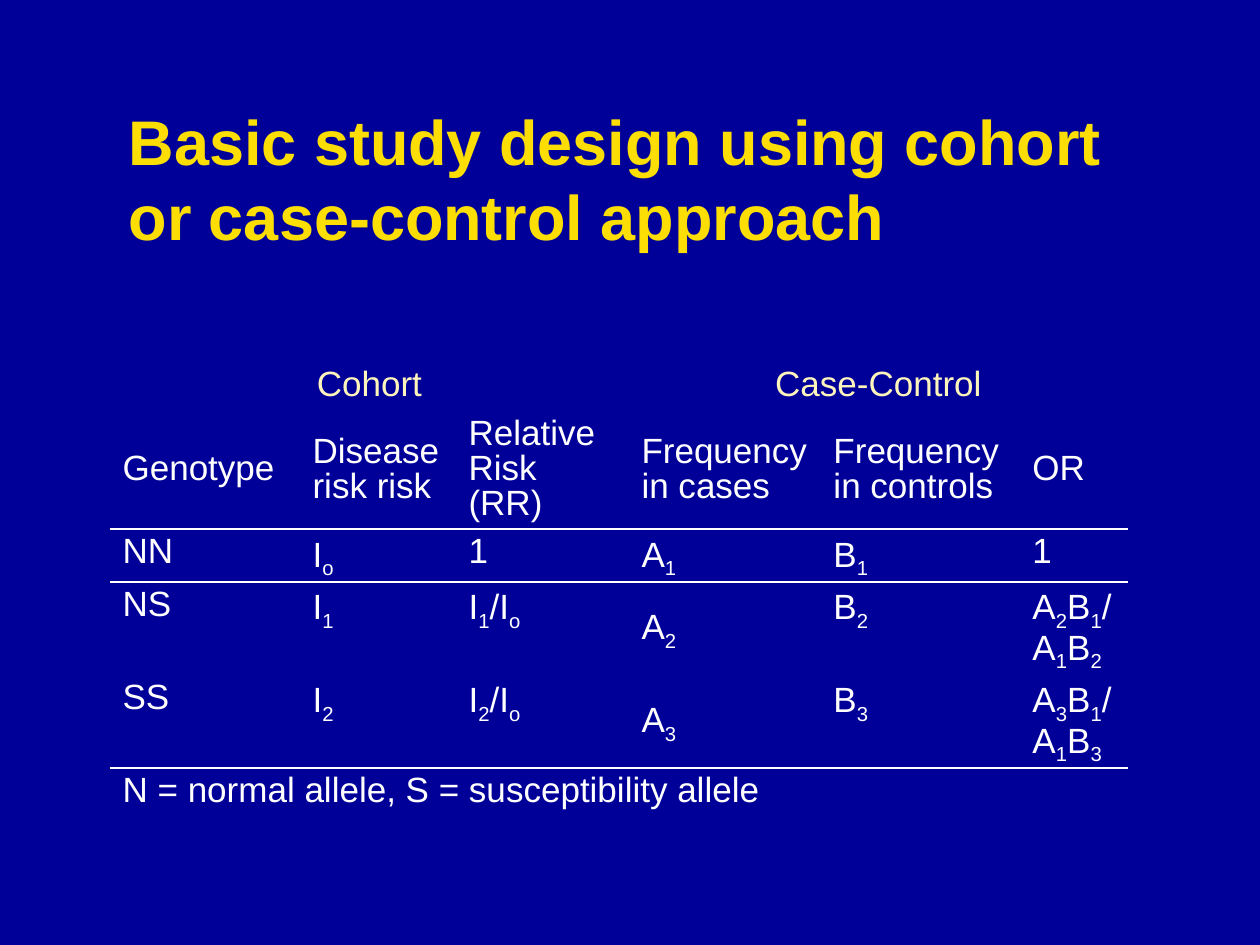
"""Build a slide comparing cohort and case-control designs in one table."""
from lxml.etree import SubElement
from pptx import Presentation
from pptx.dml.color import RGBColor
from pptx.enum.text import MSO_ANCHOR as Anchor, MSO_AUTO_SIZE as AutoSize, PP_ALIGN as Align
from pptx.oxml import parse_xml
from pptx.oxml.ns import nsdecls, qn
from pptx.util import Pt

PX = 914400 // 126
COLORS = {"background": "000099", "title": "FCDE04", "group": "FDF5BB", "text": "FFFFFF"}
NO_GRID_STYLE = "{2D5ABB26-0587-4C30-8999-92F81FD0307C}"

TITLE = "Basic study design using cohort or case-control approach"
GROUPS = [("Cohort", 0, 2), ("Case-Control", 3, 5)]
HEADERS = ["Genotype", "Disease risk risk", "Relative Risk (RR)",
           "Frequency in cases", "Frequency in controls", "OR"]
GENOTYPES = [
    ["NN", "I_o", "1", "A_1", "B_1", "1"],
    ["NS", "I_1", "I_1/I_o", "A_2", "B_2", "A_2B_1/ A_1B_2"],
    ["SS", "I_2", "I_2/I_o", "A_3", "B_3", "A_3B_1/ A_1B_3"],
]
FOOTNOTE = "N = normal allele, S = susceptibility allele"

TITLE_BOX = (116, 96, 1050, 164)
TABLE_LEFT, TABLE_TOP, ROW_HEIGHT = 110, 360, 51
COLUMN_WIDTHS = [190, 156, 173, 192, 199, 108]
CASES_COLUMN = HEADERS.index("Frequency in cases")


def write(frame, text, size=20, color="text", bold=False, align=Align.LEFT, spacing=0.9):
    """Write text in a frame; an underscore makes the next character a subscript."""
    paragraph = frame.paragraphs[0]
    paragraph.alignment = align
    paragraph.line_spacing = spacing
    paragraph.space_before = Pt(0)
    first, *others = text.split("_")
    pieces = [(first, False)]
    for part in others:
        pieces += [(part[0], True), (part[1:], False)]
    for piece, subscript in pieces:
        if not piece:
            continue
        run = paragraph.add_run()
        run.text = piece
        run.font.name = "Arial"
        run.font.size = Pt(size)
        run.font.bold = bold
        run.font.color.rgb = RGBColor.from_string(COLORS[color])
        if subscript:
            run.font._element.set("baseline", "-25000")


def fill_cell(cell, text, anchor=Anchor.TOP, **style):
    cell.vertical_anchor = anchor
    write(cell.text_frame, text, **style)


def rule_row(row, side):
    for cell in row.cells:
        line = parse_xml(f'<a:{side} {nsdecls("a")} w="{Pt(1)}"/>')
        solid = SubElement(line, qn("a:solidFill"))
        SubElement(solid, qn("a:srgbClr"), val=COLORS["text"])
        cell._tc.get_or_add_tcPr().insert(0, line)


def add_title(slide):
    title = slide.shapes.title
    title.left, title.top, title.width, title.height = (value * PX for value in TITLE_BOX)
    frame = title.text_frame
    frame.word_wrap = True
    frame.auto_size = AutoSize.NONE
    frame.vertical_anchor = Anchor.MIDDLE
    write(frame, TITLE, size=36, color="title", bold=True, spacing=Pt(43.2))


def add_study_table(slide):
    row_count = len(GENOTYPES) + 3
    last = row_count - 1
    table = slide.shapes.add_table(
        row_count, len(HEADERS), TABLE_LEFT * PX, TABLE_TOP * PX,
        sum(COLUMN_WIDTHS) * PX, row_count * ROW_HEIGHT * PX).table
    table.first_row = table.horz_banding = False
    table._tbl.tblPr.find(qn("a:tableStyleId")).text = NO_GRID_STYLE
    for column, width in zip(table.columns, COLUMN_WIDTHS):
        column.width = width * PX
    for cell in table.iter_cells():
        cell.fill.background()

    for text, start, end in GROUPS:
        table.cell(0, start).merge(table.cell(0, end))
        fill_cell(table.cell(0, start), text, Anchor.MIDDLE, color="group", align=Align.CENTER)
    for row, values in enumerate([HEADERS] + GENOTYPES, 1):
        for column, text in enumerate(values):
            middle = row == 1 or column == CASES_COLUMN
            fill_cell(table.cell(row, column), text, Anchor.MIDDLE if middle else Anchor.TOP)
    table.cell(last, 0).merge(table.cell(last, len(HEADERS) - 1))
    fill_cell(table.cell(last, 0), FOOTNOTE)

    for above in (1, last - 1):
        rule_row(table.rows[above], "lnB")
        rule_row(table.rows[above + 1], "lnT")


def main():
    presentation = Presentation()
    presentation.slide_width, presentation.slide_height = 1260 * PX, 945 * PX
    slide = presentation.slides.add_slide(presentation.slide_layouts[5])
    background = slide.background.fill
    background.solid()
    background.fore_color.rgb = RGBColor.from_string(COLORS["background"])
    add_title(slide)
    add_study_table(slide)
    presentation.save("out.pptx")


if __name__ == "__main__":
    main()
